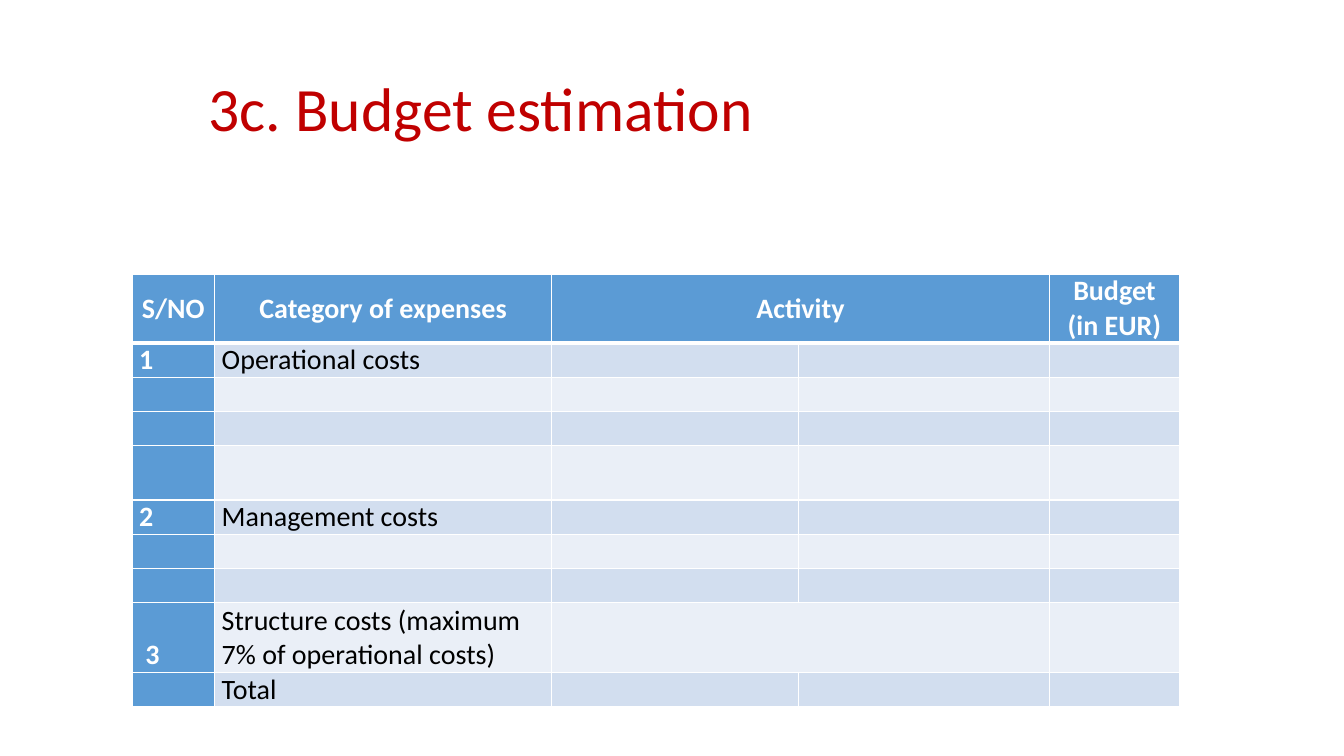
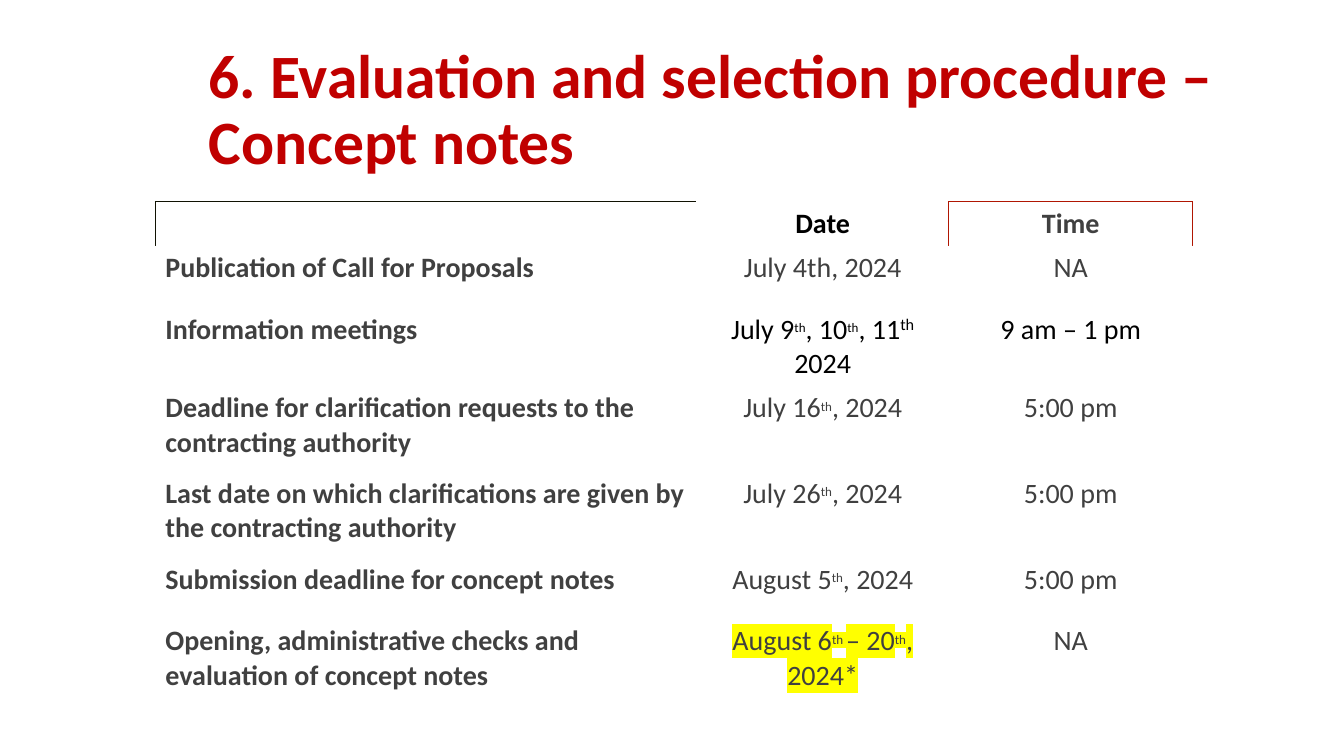
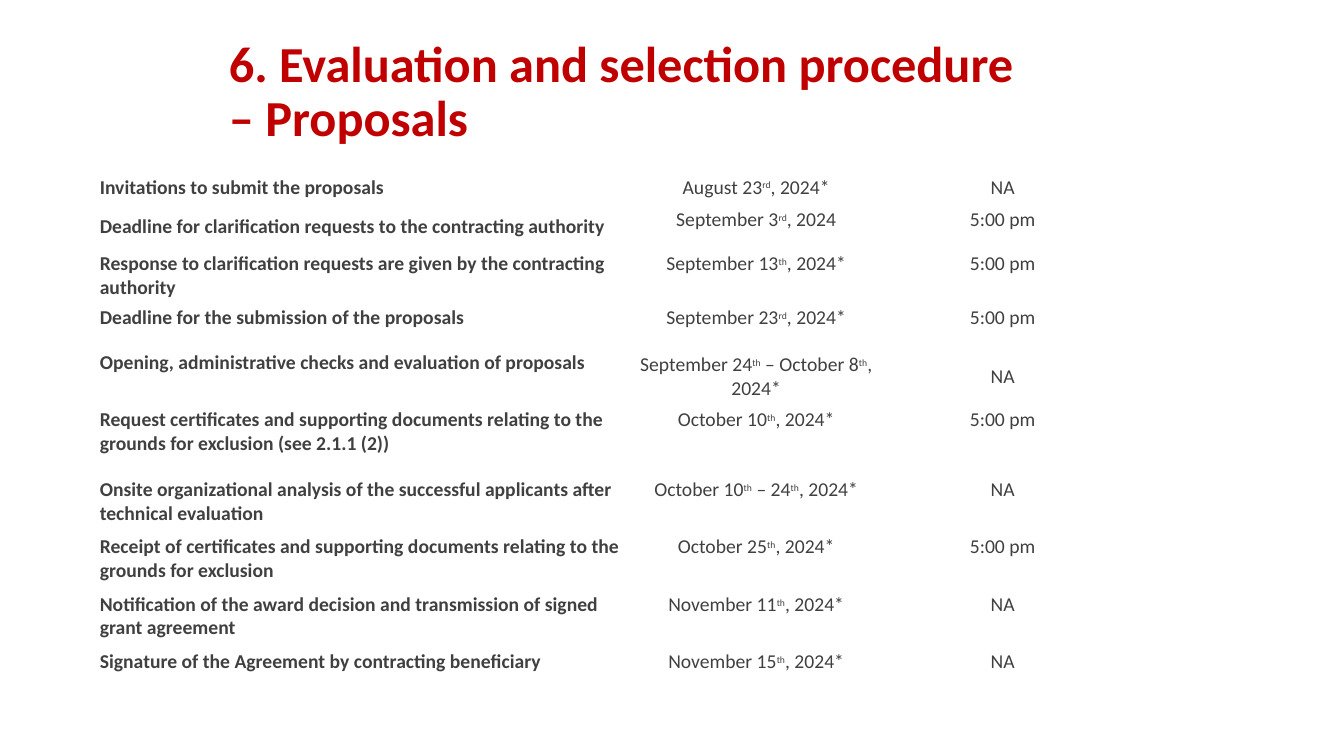
import pptx
import pptx.dml.color
import pptx.enum.text
import pptx.oxml.ns
import pptx.util
from lxml import etree

Inches, Pt = pptx.util.Inches, pptx.util.Pt
RGBColor = pptx.dml.color.RGBColor
ANCHOR, ALIGN = pptx.enum.text.MSO_ANCHOR, pptx.enum.text.PP_ALIGN
qn = pptx.oxml.ns.qn

FONT = "Calibri"
RED = RGBColor(0xC0, 0x00, 0x00)
BLACK = RGBColor(0x00, 0x00, 0x00)
WHITE = RGBColor(0xFF, 0xFF, 0xFF)
GREY = RGBColor(0x40, 0x40, 0x40)
BLUE = RGBColor(0x5B, 0x9B, 0xD5)
BAND_DARK = RGBColor(0xD2, 0xDE, 0xEF)
BAND_LIGHT = RGBColor(0xEA, 0xEF, 0xF7)
YELLOW = RGBColor(0xFF, 0xFF, 0x00)
EDGE_DARK = RGBColor(0x10, 0x12, 0x02)
EDGE_RED = RGBColor(0xB0, 0x16, 0x02)

EXPENSES = {1: ("1", "Operational costs"), 5: ("2", "Management costs"),
            8: (" 3", "Structure costs (maximum 7% of operational costs)"),
            9: ("", "Total")}

CONCEPT_NOTES = [
    ("", "Date", "Time"),
    ("Publication of Call for Proposals", "July 4th, 2024", "NA"),
    ("Information meetings", "July 9^th^, 10^th^, 11^+th^ 2024", "9 am – 1 pm"),
    ("Deadline for clarification requests to the contracting authority",
     "July 16^th^, 2024", "5:00 pm"),
    ("Last date on which clarifications are given by the contracting authority",
     "July 26^th^, 2024", "5:00 pm"),
    ("Submission deadline for concept notes", "August 5^th^, 2024", "5:00 pm"),
    ("Opening, administrative checks and evaluation of concept notes",
     "August 6^th ^– 20^th^, 2024*", "NA"),
]

PROPOSALS = [
    ("Invitations to submit the proposals", "August 23^rd^, 2024*", "NA"),
    ("Deadline for clarification requests to the contracting authority",
     "September 3^rd^, 2024", "5:00 pm"),
    ("Response to clarification requests are given by the contracting authority",
     "September 13^th^, 2024*", "5:00 pm"),
    ("Deadline for the submission of the proposals", "September 23^rd^, 2024*", "5:00 pm"),
    ("Opening, administrative checks and evaluation of proposals",
     "September 24^th^ – October 8^th^, 2024*", "NA"),
    ("Request certificates and supporting documents relating to the grounds for "
     "exclusion (see 2.1.1 (2))", "October 10^th^, 2024*", "5:00 pm"),
    ("Onsite organizational analysis of the successful applicants after technical evaluation",
     "October 10^th^ – 24^th^, 2024*", "NA"),
    ("Receipt of certificates and supporting documents relating to the grounds for exclusion",
     "October 25^th^, 2024*", "5:00 pm"),
    ("Notification of the award decision and transmission of signed grant agreement",
     "November 11^th^, 2024*", "NA"),
    ("Signature of the Agreement by contracting beneficiary", "November 15^th^, 2024*", "NA"),
]


def add_run(p, text, size, color, bold, highlight=None):
    """Add one formatted run to a paragraph and return it."""
    r = p.add_run()
    r.text = text
    r.font.size, r.font.bold = Pt(size), bold
    r.font.color.rgb = color
    if highlight is not None:
        mark = etree.SubElement(r._r.get_or_add_rPr(), qn("a:highlight"))
        etree.SubElement(mark, qn("a:srgbClr")).set("val", str(highlight))
    r.font.name = FONT
    return r


def add_title_slide(prs, box, text, size=44, bold=True):
    """Add a title-only slide with its title placed in the box."""
    s = prs.slides.add_slide(prs.slide_layouts[5])
    title = s.shapes.title
    title.left, title.top, title.width, title.height = map(Inches, box)
    tf = title.text_frame
    tf.auto_size = pptx.enum.text.MSO_AUTO_SIZE.NONE
    tf.word_wrap = True
    tf.vertical_anchor = ANCHOR.MIDDLE
    p = tf.paragraphs[0]
    p.alignment, p.line_spacing = ALIGN.LEFT, 0.9
    add_run(p, text, size, RED, bold)
    return s


def add_grid(s, left, top, widths, heights, margins):
    """Add a plain table with the given columns, rows and cell margins."""
    tbl = s.shapes.add_table(len(heights), len(widths), Inches(left), Inches(top),
                             Inches(sum(widths)), Inches(sum(heights))).table
    tbl.first_row = tbl.horz_banding = False
    for column, width in zip(tbl.columns, widths):
        column.width = Inches(width)
    for row, height in zip(tbl.rows, heights):
        row.height = Inches(height)
    for cell in tbl.iter_cells():
        cell.margin_left = cell.margin_right = Inches(margins[0])
        cell.margin_top = cell.margin_bottom = Inches(margins[1])
    return tbl


def set_borders(cell, default, **sides):
    """Draw the four cell borders, each a (colour, points) pair."""
    tc_pr = cell._tc.get_or_add_tcPr()
    for i, side in enumerate("LRTB"):
        color, width = sides.get(side, default)
        ln = etree.Element(qn("a:ln" + side), w=str(Pt(width)))
        fill = etree.SubElement(ln, qn("a:solidFill"))
        etree.SubElement(fill, qn("a:srgbClr")).set("val", str(color))
        tc_pr.insert(i, ln)


def fill_cell(cell, color):
    """Give a cell a solid fill."""
    cell.fill.solid()
    cell.fill.fore_color.rgb = color


def write_cell(cell, text, size, color, bold=False, align=ALIGN.LEFT,
               anchor=ANCHOR.TOP, highlight=None):
    """Write text in a cell; parts between carets are raised, with + at full size."""
    cell.vertical_anchor = anchor
    p = cell.text_frame.paragraphs[0]
    p.alignment = align
    for i, part in enumerate(text.split("^")):
        raised = i % 2 == 1
        part_size = size
        if raised and not part.startswith("+"):
            part_size = 16 if size == 20 else 12
        if part:
            r = add_run(p, part.lstrip("+"), part_size, color, bold, highlight)
            if raised:
                r._r.get_or_add_rPr().set("baseline", "30000")


def add_budget_table(s, left, top):
    """Add the banded budget table with its header and number column."""
    line = 0.34
    heights = [0.67] + [line] * 3 + [0.54] + [line] * 3 + [0.69, line]
    tbl = add_grid(s, left, top, [0.82, 3.34, 2.45, 2.49, 1.29], heights, (0.07, 0))
    for row in (0, 8):
        tbl.cell(row, 2).merge(tbl.cell(row, 3))
    thin, thick = (WHITE, 1), (WHITE, 3)
    for row in range(len(heights)):
        band = BAND_DARK if row % 2 else BAND_LIGHT
        for col in range(5):
            cell = tbl.cell(row, col)
            fill_cell(cell, BLUE if row == 0 or col == 0 else band)
            set_borders(cell, thin, B=thick if row == 0 else thin,
                        T=thick if row == 1 else thin)
    for col, text in {0: "S/NO", 1: "Category of expenses", 2: "Activity",
                      4: "Budget (in EUR)"}.items():
        write_cell(tbl.cell(0, col), text, 20, WHITE, True, ALIGN.CENTER, ANCHOR.MIDDLE)
    for row, (number, category) in EXPENSES.items():
        write_cell(tbl.cell(row, 0), number, 20, WHITE, True, anchor=ANCHOR.BOTTOM)
        write_cell(tbl.cell(row, 1), category, 20, BLACK, anchor=ANCHOR.BOTTOM)


def add_schedule(s, left, top, widths, heights, margins, rows, size, header=False,
                 middle=(), black=(), marked=()):
    """Add a table of steps, dates and times; the sets hold special (row, column) cells."""
    tbl = add_grid(s, left, top, widths, heights, margins)
    dark, red = (EDGE_DARK, 0.5), (EDGE_RED, 0.5)
    header_edges = [{"L": dark, "T": dark}, {"R": red}, {"L": red, "T": red, "R": red}]
    for i, texts in enumerate(rows):
        for j, text in enumerate(texts):
            cell, head = tbl.cell(i, j), header and i == 0
            fill_cell(cell, WHITE)
            set_borders(cell, (WHITE, 0.5), **(header_edges[j] if head else {}))
            write_cell(cell, text, size, BLACK if (i, j) in black else GREY,
                       head or j == 0, ALIGN.CENTER if j else ALIGN.LEFT,
                       ANCHOR.MIDDLE if (i, j) in middle else ANCHOR.TOP,
                       YELLOW if (i, j) in marked else None)


def main():
    """Build the three slides and save them."""
    prs = pptx.Presentation()
    prs.slide_width, prs.slide_height = Inches(13.33), Inches(7.5)

    s = add_title_slide(prs, (1.97, 0.38, 9.45, 1.45), "3c. Budget estimation", bold=False)
    add_budget_table(s, 1.31, 2.72)

    s = add_title_slide(prs, (1.97, 0.38, 10.29, 1.45),
                        "6. Evaluation and selection procedure – Concept notes")
    add_schedule(s, 1.54, 2, [5.37, 2.5, 2.42], [0.44, 0.61, 0.78, 0.85, 0.85, 0.61, 0.85],
                 (0.1, 0.05), CONCEPT_NOTES, 20, header=True,
                 black={(0, 1), (2, 1), (2, 2)}, marked={(6, 1)})

    s = add_title_slide(prs, (2.17, 0.3, 8.1, 1.25),
                        "6. Evaluation and selection procedure – Proposals", size=36)
    add_schedule(s, 0.92, 1.71, [5.34, 2.48, 2.41],
                 [0.32, 0.44, 0.54, 0.44, 0.57, 0.69, 0.57, 0.57, 0.57, 0.44],
                 (0.07, 0.03), PROPOSALS, 14, middle={(1, 0), (2, 0), (4, 1), (4, 2)})

    prs.save("out.pptx")


if __name__ == "__main__":
    main()
